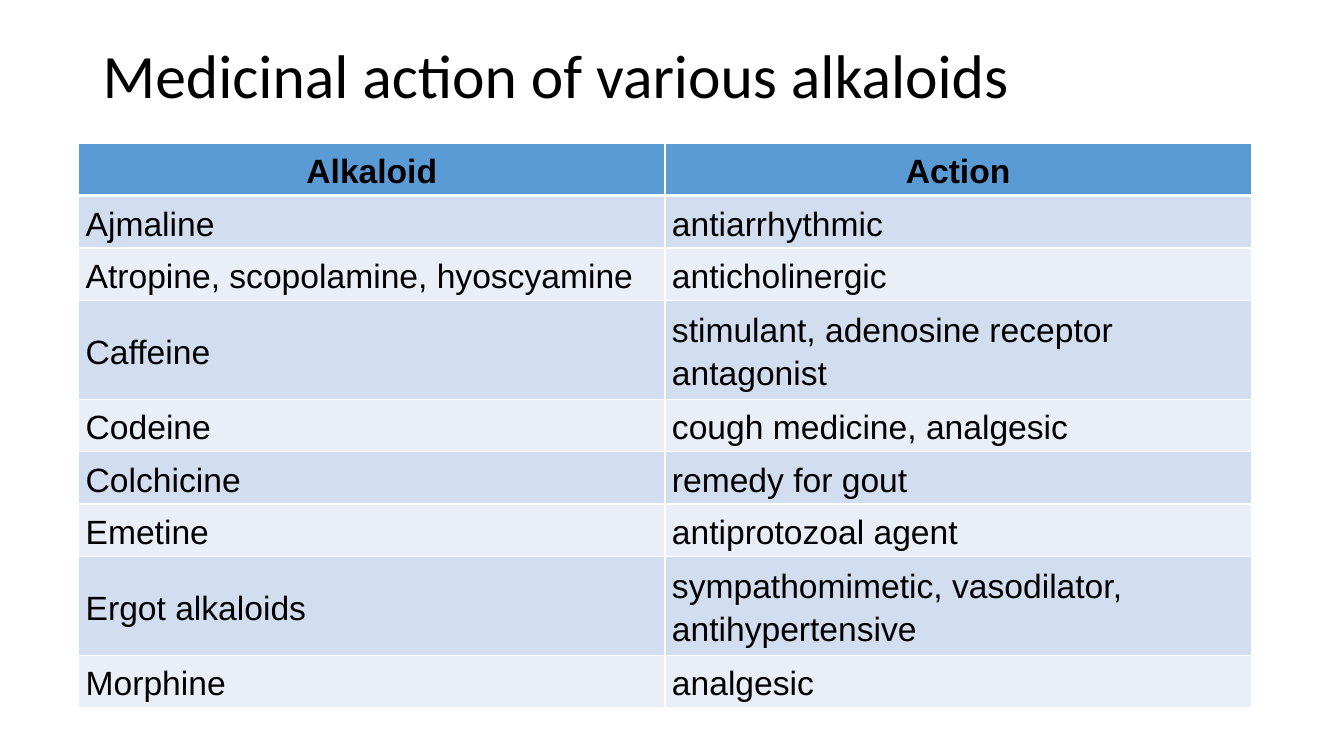
from dataclasses import dataclass

from lxml.etree import SubElement
from pptx import Presentation
from pptx.dml.color import RGBColor
from pptx.enum.text import MSO_ANCHOR, PP_ALIGN
from pptx.oxml.ns import qn
from pptx.slide import Slide
from pptx.table import _Cell
from pptx.text.text import _Paragraph
from pptx.util import Emu, Pt

EMU_PER_PX = 9144


@dataclass(frozen=True)
class Theme:
    ink: str = "000000"
    header: str = "5B9BD5"
    bands: tuple[str, str] = ("D2DEEF", "EAEFF7")
    rule: str = "FFFFFF"
    title_font: str = "Calibri"
    body_font: str = "Arial"
    title_size: int = 44
    body_size: int = 24
    paragraph_gap: int = 12
    thin_rule: int = 1
    thick_rule: int = 3


@dataclass(frozen=True)
class Box:
    left: int
    top: int
    width: int
    height: int

    def emu(self) -> tuple[Emu, Emu, Emu, Emu]:
        return px(self.left), px(self.top), px(self.width), px(self.height)


@dataclass(frozen=True)
class Remedy:
    alkaloid: str
    action: str


THEME = Theme()
SLIDE = Box(0, 0, 1333, 750)
HEADING = Box(92, 40, 1150, 76)
REMEDY_GRID = Box(78, 142, 1163, 566)
ROW_HEIGHT = 46
CELL_INSET_X, CELL_INSET_Y = 7, 3
HEADER = Remedy("Alkaloid", "Action")
REMEDIES = (
    Remedy("Ajmaline", "antiarrhythmic"),
    Remedy("Atropine, scopolamine, hyoscyamine", "anticholinergic"),
    Remedy("Caffeine", "stimulant, adenosine receptor antagonist"),
    Remedy("Codeine", "cough medicine, analgesic"),
    Remedy("Colchicine", "remedy for gout"),
    Remedy("Emetine", "antiprotozoal agent"),
    Remedy("Ergot alkaloids", "sympathomimetic, vasodilator, antihypertensive"),
    Remedy("Morphine", "analgesic"),
)


def px(length: int) -> Emu:
    return Emu(length * EMU_PER_PX)


def add_run(paragraph: _Paragraph, text: str, font: str, size: int, bold: bool = False) -> None:
    run = paragraph.add_run()
    run.text = text
    run.font.name = font
    run.font.size = Pt(size)
    run.font.bold = bold
    run.font.color.rgb = RGBColor.from_string(THEME.ink)


def add_heading(slide: Slide, text: str) -> None:
    frame = slide.shapes.add_textbox(*HEADING.emu()).text_frame
    frame.word_wrap = True
    frame.vertical_anchor = MSO_ANCHOR.MIDDLE
    paragraph = frame.paragraphs[0]
    paragraph.line_spacing = 0.9
    add_run(paragraph, text, THEME.title_font, THEME.title_size)


def rule_cell(cell: _Cell, bottom: int) -> None:
    properties = cell._tc.get_or_add_tcPr()
    widths = {"a:lnL": THEME.thin_rule, "a:lnR": THEME.thin_rule,
              "a:lnT": THEME.thin_rule, "a:lnB": bottom}
    for position, (edge, width) in enumerate(widths.items()):
        line = SubElement(properties, qn(edge), w=str(Pt(width)))
        fill = SubElement(line, qn("a:solidFill"))
        SubElement(fill, qn("a:srgbClr"), val=THEME.rule)
        properties.insert(position, line)


def fill_cell(cell: _Cell, text: str, color: str, is_header: bool) -> None:
    cell.fill.solid()
    cell.fill.fore_color.rgb = RGBColor.from_string(color)
    cell.margin_left = cell.margin_right = px(CELL_INSET_X)
    cell.margin_top = cell.margin_bottom = px(CELL_INSET_Y)
    cell.vertical_anchor = MSO_ANCHOR.MIDDLE
    paragraph = cell.text_frame.paragraphs[0]
    paragraph.alignment = PP_ALIGN.CENTER if is_header else PP_ALIGN.LEFT
    paragraph.line_spacing = 1.15
    paragraph.space_before = paragraph.space_after = Pt(THEME.paragraph_gap)
    add_run(paragraph, text, THEME.body_font, THEME.body_size, is_header)
    rule_cell(cell, THEME.thick_rule if is_header else THEME.thin_rule)


def add_remedies(slide: Slide) -> None:
    entries = (HEADER, *REMEDIES)
    grid_frame = slide.shapes.add_table(len(entries), 2, *REMEDY_GRID.emu())
    grid = grid_frame.table
    for index, entry in enumerate(entries):
        is_header = index == 0
        color = THEME.header if is_header else THEME.bands[(index - 1) % 2]
        grid.rows[index].height = px(ROW_HEIGHT)
        for column, text in enumerate((entry.alkaloid, entry.action)):
            fill_cell(grid.cell(index, column), text, color, is_header)
    grid_frame.height = px(REMEDY_GRID.height)


def main() -> None:
    deck = Presentation()
    deck.slide_width, deck.slide_height = px(SLIDE.width), px(SLIDE.height)
    slide = deck.slides.add_slide(deck.slide_layouts[6])
    add_heading(slide, "Medicinal action of various alkaloids")
    add_remedies(slide)
    deck.save("out.pptx")


if __name__ == "__main__":
    main()
